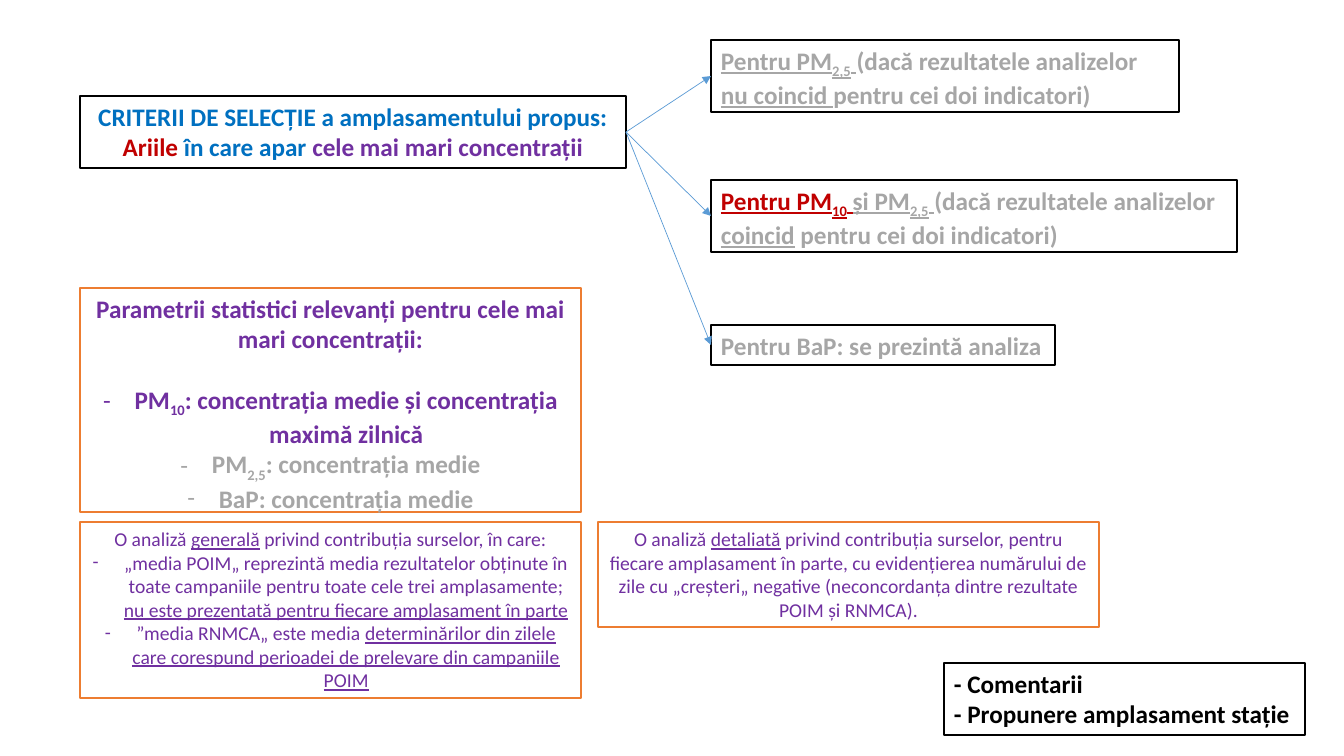
import pptx
import pptx.util
import pptx.dml.color
import pptx.enum.shapes
import pptx.enum.text
import pptx.oxml.ns
import lxml.etree

SCALE = 914400 / 100.8
BLUE, RED, VIOLET = "0070C0", "C00000", "7030A0"
GREY, BLACK, ORANGE = "A6A6A6", "000000", "ED7D31"


def px(n):
    return pptx.util.Emu(round(n * SCALE))


def color(code):
    return pptx.dml.color.RGBColor.from_string(code)


def add_sub(node, tag, **attrs):
    return lxml.etree.SubElement(node, pptx.oxml.ns.qn(tag), attrs)


def write(para, text, size=18, ink=BLACK, bold=False, under=False, sub=False):
    run = para.add_run()
    run.text = text
    font = run.font
    font.name, font.size = "Calibri", pptx.util.Pt(size)
    font.bold, font.underline = bold, under
    font.color.rgb = color(ink)
    if sub:
        run._r.get_or_add_rPr().set("baseline", "-25000")


class Board:
    def __init__(self, slide, font="Calibri", thin=0.5, edge=1):
        self.slide, self.font = slide, font
        self.thin, self.edge = thin, edge

    def box(self, left, top, width, height, line=BLACK):
        shape = self.slide.shapes.add_shape(
            pptx.enum.shapes.MSO_SHAPE.RECTANGLE,
            px(left), px(top), px(width), px(height))
        shape.shadow.inherit = False
        shape.fill.solid()
        shape.fill.fore_color.rgb = color("FFFFFF")
        shape.line.color.rgb = color(line)
        shape.line.width = pptx.util.Pt(self.edge)
        frame = shape.text_frame
        frame.word_wrap = True
        frame.vertical_anchor = pptx.enum.text.MSO_ANCHOR.TOP
        frame.auto_size = pptx.enum.text.MSO_AUTO_SIZE.SHAPE_TO_FIT_TEXT
        return shape

    def text(self, shape, *paras, center=False, **style):
        """Each paragraph is a list of (text, format) pairs."""
        frame = shape.text_frame
        align = pptx.enum.text.PP_ALIGN
        for i, parts in enumerate(paras):
            para = frame.add_paragraph() if i else frame.paragraphs[0]
            para.alignment = align.CENTER if center else align.LEFT
            for words, extra in parts:
                write(para, words, **{**style, **extra})

    def dash(self, para):
        props = para._p.get_or_add_pPr()
        props.set("marL", "285750")
        props.set("indent", "-285750")
        add_sub(props, "a:buFont", typeface=self.font)
        add_sub(props, "a:buChar", char="-")

    def arrow(self, start, end):
        link = self.slide.shapes.add_connector(
            pptx.enum.shapes.MSO_CONNECTOR.STRAIGHT, 0, 0, 0, 0)
        link.begin_connect(start, 3)
        link.end_connect(end, 1)
        link.line.color.rgb = color("5B9BD5")
        link.line.width = pptx.util.Pt(self.thin)
        add_sub(link.line._get_or_add_ln(), "a:tailEnd", type="triangle")
        add_sub(link._element.spPr, "a:effectLst")


def main():
    deck = pptx.Presentation()
    deck.slide_width, deck.slide_height = px(1344), px(756)
    board = Board(deck.slides.add_slide(deck.slide_layouts[6]))
    under, plain = {"under": True}, {}
    low = {"under": True, "sub": True}

    # Selection criteria
    root = board.box(80, 96, 546, 72)
    board.text(
        root,
        [("CRITERII DE SELECȚIE a amplasamentului propus:", plain)],
        [("Ariile", {"ink": RED}), (" în care apar ", plain),
         ("cele mai mari concentrații", {"ink": VIOLET})],
        center=True, ink=BLUE, bold=True)

    # Statistical parameters
    stats = board.box(80, 288, 501, 224, ORANGE)
    grey = {"ink": GREY}
    board.text(
        stats,
        [("Parametrii statistici relevanți pentru cele mai mari concentrații:",
          plain)],
        [("PM", plain), ("10", {"sub": True}),
         (": concentrația medie și concentrația maximă zilnică", plain)],
        [("PM", grey), ("2,5", {"ink": GREY, "sub": True}),
         (": concentrația medie", grey)],
        [("BaP: concentrația medie", grey)],
        center=True, ink=VIOLET, bold=True)
    stats.text_frame.paragraphs[1].space_before = pptx.util.Pt(22)

    # Three cases, each reached by an arrow
    fine = [("2,5", low), (" ", under), ("(dacă rezultatele analizelor ", plain)]
    tail = "pentru cei doi indicatori)"
    red = {"ink": RED, "under": True}
    cases = [
        ((711, 40, 468, 72),
         [("Pentru PM", under), *fine, ("nu coincid ", under), (tail, plain)]),
        ((711, 180, 526, 72),
         [("Pentru PM", red), ("10", {**red, "sub": True}), (" ", red),
          ("și PM", under), *fine, ("coincid", under), (" " + tail, plain)]),
        ((711, 325, 344, 40), [("Pentru BaP: se prezintă analiza", plain)]),
    ]
    for area, parts in cases:
        case = board.box(*area)
        board.text(case, parts, ink=GREY, bold=True)
        board.arrow(root, case)

    # General and detailed source analysis
    broad = board.box(80, 522, 501, 176, ORANGE)
    board.text(
        broad,
        [("O analiză ", plain), ("generală", under),
         (" privind contribuția surselor, în care:", plain)],
        [("„media POIM„ reprezintă media rezultatelor obținute în toate "
          "campaniile pentru toate cele trei amplasamente; ", plain),
         ("nu este prezentată pentru fiecare amplasament în parte", under)],
        [("”media RNMCA„ este media ", plain),
         ("determinărilor din zilele care corespund perioadei de prelevare "
          "din campaniile POIM", under)],
        center=True, size=14, ink=VIOLET)
    for shape in (stats, broad):
        for para in shape.text_frame.paragraphs[1:]:
            board.dash(para)

    close = board.box(598, 522, 501, 105, ORANGE)
    board.text(
        close,
        [("O analiză ", plain), ("detaliată", under),
         (" privind contribuția surselor, pentru fiecare amplasament în parte, "
          "cu evidențierea numărului de zile cu „creșteri„ negative "
          "(neconcordanța dintre rezultate POIM și RNMCA).", plain)],
        center=True, size=14, ink=VIOLET)

    # Closing notes
    board.text(
        board.box(944, 663, 361, 72),
        [("- Comentarii", plain)],
        [("- Propunere amplasament stație", plain)],
        bold=True)

    deck.save("out.pptx")


if __name__ == "__main__":
    main()
